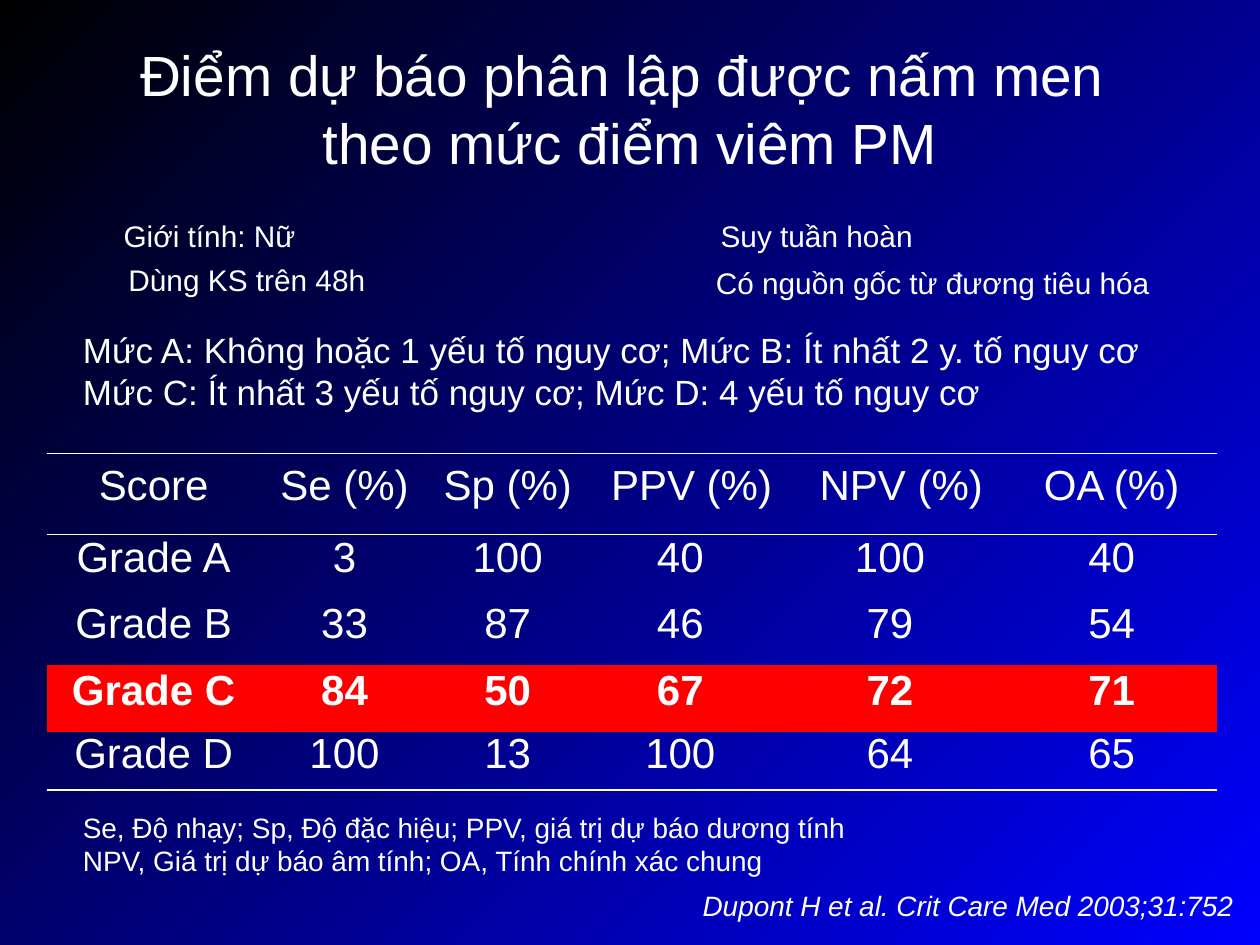
from pptx import Presentation
from pptx.dml.color import RGBColor
from pptx.enum.text import MSO_ANCHOR as Anchor, PP_ALIGN as Align
from pptx.oxml import parse_xml
from pptx.oxml.ns import nsdecls
from pptx.util import Pt

WHITE = RGBColor(0xFF, 0xFF, 0xFF)
RED = RGBColor(0xFF, 0, 0)
BLUE = RGBColor(0, 0, 0xFF)
BLACK = RGBColor(0, 0, 0)

COLS = [122.4, 95.8, 90.7, 106.6, 12.9, 120.2, 120.2]
ROWS = [46.1, 36, 38.9, 38.1, 33.1]
SCORES = [
    ("Score", "Se (%)", "Sp (%)", "PPV (%)", "NPV (%)", "OA (%)"),
    ("Grade A", "3", "100", "40", "100", "40"),
    ("Grade B", "33", "87", "46", "79", "54"),
    ("Grade C", "84", "50", "67", "72", "71"),
    ("Grade D", "100", "13", "100", "64", "65"),
]
BEST = 3

FACTORS = [
    (70.6, 124.6, 99, "Giới tính: Nữ"),
    (411.8, 124.6, 111, "Suy tuần hoàn"),
    (409, 151.2, 251, "Có nguồn gốc từ đương tiêu hóa"),
    (73.4, 149.8, 137, "Dùng KS trên 48h"),
]
GRADES = [
    "Mức A: Không hoặc 1 yếu tố nguy cơ; Mức B: Ít nhất 2 y. tố nguy cơ",
    "Mức C: Ít nhất 3 yếu tố nguy cơ; Mức D: 4 yếu tố nguy cơ",
]
LEGEND = [
    "Se, Độ nhạy; Sp, Độ đặc hiệu; PPV, giá trị dự báo dương tính",
    "NPV, Giá trị dự báo âm tính; OA, Tính chính xác chung",
]


def set_font(para, size, bold=False, italic=False):
    font = para.font
    font.name, font.size = "Arial", Pt(size)
    font.bold, font.italic = bold, italic
    font.color.rgb = WHITE


def paint_back(slide):
    """Fill the background with a gradient that spreads from the lower right corner."""
    slide.background.fill.solid()
    old = slide.background.fill._xPr.find(".//{*}solidFill")
    grad = parse_xml(
        f'<a:gradFill {nsdecls("a")} rotWithShape="0"><a:gsLst>'
        f'<a:gs pos="0"><a:srgbClr val="{BLUE}"/></a:gs>'
        f'<a:gs pos="100000"><a:srgbClr val="{BLACK}"/></a:gs></a:gsLst>'
        '<a:path path="circle"><a:fillToRect l="100000" t="100000"/></a:path>'
        '</a:gradFill>')
    old.getparent().replace(old, grad)


def add_text(slide, box, lines, size, align=Align.LEFT, anchor=Anchor.TOP,
             italic=False, tight=False):
    """Add a text box; a tight one has no margins and does not wrap."""
    frame = slide.shapes.add_textbox(*map(Pt, box)).text_frame
    frame.word_wrap = not tight
    frame.vertical_anchor = anchor
    if tight:
        frame.margin_left = frame.margin_right = 0
        frame.margin_top = frame.margin_bottom = 0
    frame.text = "\n".join(lines)
    for para in frame.paragraphs:
        para.alignment = align
        set_font(para, size, italic=italic)


def set_lines(cell, sides):
    """Rule the given sides in white and clear the others."""
    props = cell._tc.get_or_add_tcPr()
    for side in "LRTB":
        fill = (f'<a:solidFill><a:srgbClr val="{WHITE}"/></a:solidFill>'
                if side in sides else "<a:noFill/>")
        props.append(parse_xml(
            f'<a:ln{side} {nsdecls("a")} w="{Pt(1)}">{fill}</a:ln{side}>'))


def fill_cell(cell, text, bold):
    cell.vertical_anchor = Anchor.MIDDLE
    cell.margin_left = cell.margin_right = Pt(6.5)
    cell.text = text
    para = cell.text_frame.paragraphs[0]
    para.alignment = Align.CENTER
    para.line_spacing = 0.5
    para.space_before = Pt(4.8)
    set_font(para, 24, bold)


def add_scores(slide):
    box = map(Pt, (26.6, 259.2, sum(COLS), sum(ROWS)))
    table = slide.shapes.add_table(len(ROWS), len(COLS), *box).table
    table.first_row = table.horz_banding = False
    for col, width in zip(table.columns, COLS):
        col.width = Pt(width)
    rules = {0: "TB", 1: "T", len(ROWS) - 1: "B"}
    for r, (row, height) in enumerate(zip(table.rows, ROWS)):
        row.height = Pt(height)
        for cell in row.cells:
            set_lines(cell, rules.get(r, ""))
            if r == BEST:
                cell.fill.solid()
                cell.fill.fore_color.rgb = RED
            else:
                cell.fill.background()
        # The narrow column belongs to PPV in the header, to NPV below it
        wide = 3 if r == 0 else 4
        table.cell(r, wide).merge(table.cell(r, wide + 1))
        shown = [cell for cell in row.cells if not cell.is_spanned]
        for cell, text in zip(shown, SCORES[r]):
            fill_cell(cell, text, r == BEST)


def main():
    deck = Presentation()
    deck.slide_width, deck.slide_height = Pt(720), Pt(540)
    slide = deck.slides.add_slide(deck.slide_layouts[6])
    paint_back(slide)
    add_text(slide, (0, 13, 720, 97.2),
             ["Điểm dự báo phân lập được nấm men \vtheo mức điểm viêm PM"],
             32.4, Align.CENTER, Anchor.MIDDLE)
    add_scores(slide)
    add_text(slide, (40.3, 459.4, 482.4, 46), LEGEND, 16)
    add_text(slide, (350.6, 504, 361.4, 27.4),
             ["Dupont H et al. Crit Care Med 2003;31:752"],
             16, Align.RIGHT, italic=True)
    add_text(slide, (40.3, 184.3, 639.4, 55.4), GRADES, 20)
    for left, top, width, text in FACTORS:
        add_text(slide, (left, top, width, 20.9), [text], 17, tight=True)
    deck.save("out.pptx")


if __name__ == "__main__":
    main()
